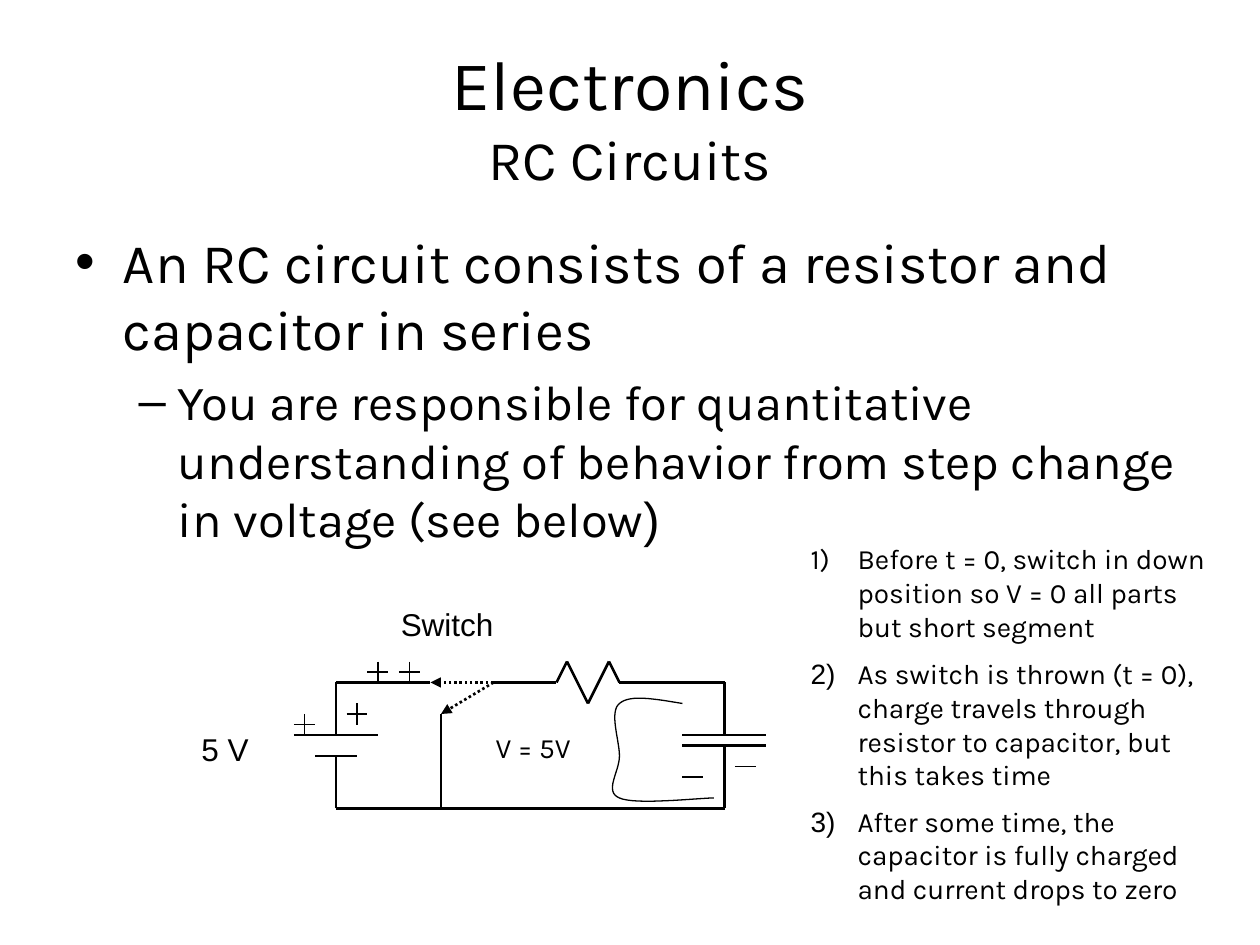
from pptx import Presentation
from pptx.dml.color import RGBColor
from pptx.enum.dml import MSO_LINE
from pptx.enum.shapes import MSO_CONNECTOR
from pptx.enum.text import MSO_ANCHOR, MSO_AUTO_SIZE, PP_ALIGN
from pptx.oxml.ns import qn
from pptx.util import Cm, Pt
from lxml import etree

STRAIGHT = MSO_CONNECTOR.STRAIGHT
DOTTED = MSO_LINE.ROUND_DOT
MIDDLE = MSO_ANCHOR.MIDDLE
GROW = MSO_AUTO_SIZE.SHAPE_TO_FIT_TEXT
CENTER = PP_ALIGN.CENTER
COLORS = {"ink": "000000", "paper": "FFFFFF"}
INK = RGBColor.from_string(COLORS["ink"])
GRID = 2.54 / 12  # the circuit sits on a grid of twelve steps to the inch, in cm
WIRE, THIN = 1.5, 0.75


def add_span(para, text, size, font="Karla"):
    span = para.add_run()
    span.text = text
    span.font.name = font
    span.font.size = Pt(size)
    span.font.color.rgb = INK


def add_line(x1, y1, x2, y2, width, arrow=False):
    line = page.shapes.add_connector(STRAIGHT, *(Cm(n * GRID) for n in (x1, y1, x2, y2)))
    line.line.color.rgb = INK
    line.line.width = Pt(width)
    properties = line._element.spPr
    if arrow:
        line.line.dash_style = DOTTED
        etree.SubElement(properties.find(qn("a:ln")), qn("a:tailEnd"), type="triangle")
    etree.SubElement(properties, qn("a:effectLst"))


deck = Presentation()
deck.slide_width, deck.slide_height = Cm(25.4), Cm(19.05)
page = deck.slides.add_slide(deck.slide_layouts[1])
page.background.fill.solid()
page.background.fill.fore_color.rgb = RGBColor.from_string(COLORS["paper"])

# Title
title = page.shapes.title
title.left, title.top, title.width, title.height = Cm(1.27), Cm(0.76), Cm(22.86), Cm(3.18)
title.text_frame.vertical_anchor = MIDDLE
para = title.text_frame.paragraphs[0]
para.alignment = CENTER
add_span(para, "Electronics", 40)
para.add_line_break()
add_span(para, "RC Circuits", 32)

# Bulleted list, with the bullets and indents of the template
body = page.placeholders[1]
body.left, body.top, body.width, body.height = Cm(1.27), Cm(4.45), Cm(22.86), Cm(12.57)
para = body.text_frame.paragraphs[0]
add_span(para, "An RC circuit consists of a resistor and capacitor in series", 32)
para = body.text_frame.add_paragraph()
para.level = 1
add_span(para, "You are responsible for quantitative understanding of behavior "
               "from step change in voltage (see below", 28)
add_span(para, ")", 28, "Arial")

# Circuit wires, battery, resistor and capacitor
wires = [
    (32, 65, 41, 65), (47, 65, 53, 65), (59, 65, 69, 65),  # top
    (69, 65, 69, 70), (69, 71, 69, 77),  # right
    (69, 77, 32, 77),  # bottom
    (32, 77, 32, 72), (32, 70, 32, 65),  # left
    (42, 68, 42, 77),  # short segment
    (28, 70, 36, 70), (30, 72, 34, 72),  # battery plates
    (65, 70, 73, 70), (65, 71, 73, 71),  # capacitor plates
]
zigzag = [(53, 65), (54, 63), (56, 67), (58, 63), (59, 65)]
wires += [start + end for start, end in zip(zigzag, zigzag[1:])]
for wire in wires:
    add_line(*wire, WIRE)

# Switch positions
for end in ((42, 68), (41, 65)):
    add_line(47, 65, *end, WIRE, arrow=True)

# Plus and minus charges
for x, y in ((29, 69), (34, 68), (39, 64), (36, 64)):
    add_line(x, y - 1, x, y + 1, THIN)
    add_line(x - 1, y, x + 1, y, THIN)
for x, y in ((66, 74), (71, 73)):
    add_line(x - 1, y, x + 1, y, THIN)

# Loop around the capacitor: Bezier segments sampled into short steps
knots = [(65, 67), (62.5, 66.6), (60, 66.1), (59, 67), (58, 67.8), (59, 70.5), (59, 72),
         (59, 73.5), (57.5, 75.4), (59, 76), (60.5, 76.7), (66.5, 76), (68, 76)]
points = []
for first in range(0, len(knots) - 1, 3):
    for step in range(1, 17):
        t = step / 16
        weights = ((1 - t) ** 3, 3 * t * (1 - t) ** 2, 3 * t * t * (1 - t), t ** 3)
        points.append(tuple(
            Cm(GRID * sum(w * knot[axis] for w, knot in zip(weights, knots[first:first + 4])))
            for axis in (0, 1)))
builder = page.shapes.build_freeform(*(Cm(n * GRID) for n in knots[0]))
builder.add_line_segments(points, close=False)
loop = builder.convert_to_shape()
loop.shadow.inherit = False
loop.fill.background()
loop.line.color.rgb = INK
loop.line.width = Pt(THIN)

# Labels and numbered notes: left, top, width, height, size, hanging, runs
texts = [
    (7.83, 12.07, 5.29, 1.02, 18, False, [("Switch", "Arial")]),
    (3.81, 14.6, 2.12, 1.02, 18, False, [("5 V", "Arial")]),
    (9.74, 14.6, 2.33, 0.93, 16, False, [("V = 5V", "Karla")]),
    (16.09, 10.8, 8.68, 2.29, 16, True, [
        ("Before t = 0, switch in down position so V = 0 all parts but short segment", "Karla")]),
    (16.09, 13.12, 8.68, 2.96, 16, True, [
        ("2)", "Arial"),
        ("\tAs switch is thrown (t = 0), charge travels through resistor to capacitor, "
         "but this takes time", "Karla")]),
    (16.09, 16.09, 8.89, 2.29, 16, True, [
        ("3)\t", "Arial"),
        ("After some time, the capacitor is fully charged and current drops to zero", "Karla")]),
]
for left, top, width, height, size, hanging, spans in texts:
    box = page.shapes.add_textbox(Cm(left), Cm(top), Cm(width), Cm(height))
    box.text_frame.word_wrap = True
    box.text_frame.auto_size = GROW
    para = box.text_frame.paragraphs[0]
    for text, font in spans:
        add_span(para, text, size, font)
    if hanging:
        settings = para._p.get_or_add_pPr()
        settings.set("marL", str(Cm(0.95)))
        settings.set("indent", str(-Cm(0.95)))
        if len(spans) == 1:  # the first note has an automatic number
            etree.SubElement(settings, qn("a:buFont"), typeface="Karla")
            etree.SubElement(settings, qn("a:buAutoNum"), type="arabicParenR")

deck.save("out.pptx")
